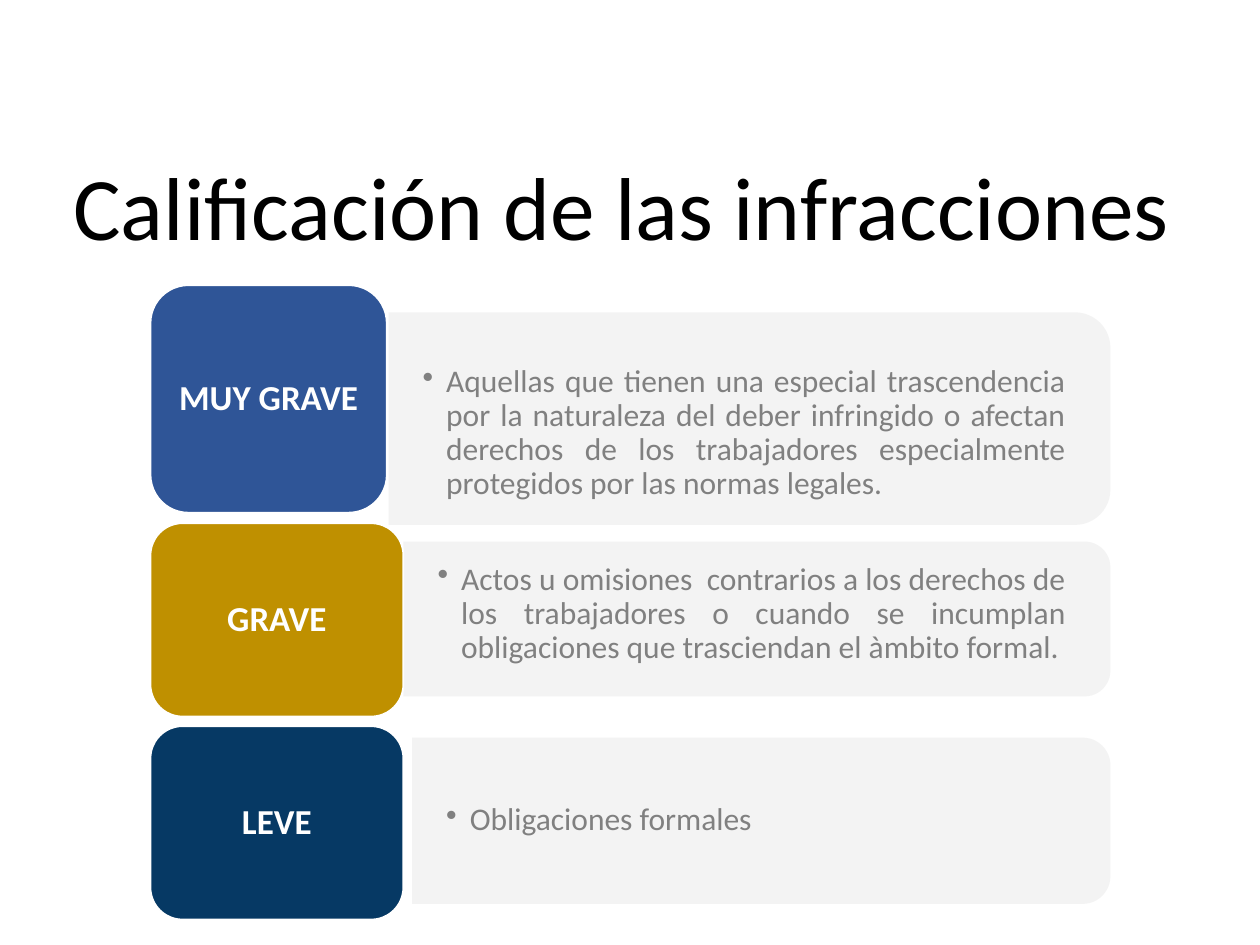
"""Build a slide that grades labour infractions in three rows."""
from typing import NamedTuple

from lxml.etree import SubElement
from pptx import Presentation
from pptx.dml.color import RGBColor
from pptx.enum.shapes import MSO_SHAPE
from pptx.enum.text import MSO_ANCHOR, PP_ALIGN
from pptx.oxml.ns import qn
from pptx.util import Pt

COLORS = {
    "black": "000000",
    "white": "FFFFFF",
    "panel": "F2F2F2",
    "gray": "808080",
    "blue": "2F5597",
    "gold": "BF9000",
    "navy": "063964",
}
FONT = "Calibri"
LEFT = 86
RIGHT = 634.5


class Box(NamedTuple):
    left: float
    top: float
    width: float
    height: float


class Grade(NamedTuple):
    name: str
    color: str
    tile: Box
    panel: Box
    text: str
    pads: tuple[float, float]


def panel(left: float, top: float, height: float) -> Box:
    return Box(left, top, RIGHT - left, height)


GRADES = [
    Grade("MUY GRAVE", "blue", Box(LEFT, 163, 135, 130), panel(222, 178.5, 121.5),
          "Aquellas que tienen una especial trascendencia por la naturaleza del deber "
          "infringido o afectan derechos de los trabajadores especialmente protegidos "
          "por las normas legales.", (17, 0)),
    Grade("GRAVE", "gold", Box(LEFT, 299, 144.5, 110.5), panel(230.5, 309.5, 88.5),
          "Actos u omisiones  contrarios a los derechos de los trabajadores o cuando se "
          "incumplan obligaciones que trasciendan el àmbito formal.", (4, 10)),
    Grade("LEVE", "navy", Box(LEFT, 415, 144.5, 110.5), panel(235.5, 421.5, 95),
          "Obligaciones formales", (10, 10)),
]


def rgb(name: str) -> RGBColor:
    return RGBColor.from_string(COLORS[name])


def put(item, values: dict) -> None:
    for key, value in values.items():
        setattr(item, key, value)


def place(box: Box) -> list:
    return [Pt(n) for n in box]


def write(frame, text: str, color: str, font: dict, para: dict, pads: dict):
    put(frame, {"word_wrap": True, "vertical_anchor": MSO_ANCHOR.MIDDLE}
        | {f"margin_{side}": Pt(n) for side, n in pads.items()})
    line = frame.paragraphs[0]
    put(line, para)
    run = line.add_run()
    run.text = text
    put(run.font, {"name": FONT} | font)
    run.font.color.rgb = rgb(color)
    return line


def draw_title(slide) -> None:
    title = slide.shapes.title
    put(title, dict(zip(("left", "top", "width", "height"),
                        place(Box(31, 61, 648, 90)))))
    write(title.text_frame, "Calificación de las infracciones", "black",
          {"size": Pt(51)}, {"alignment": PP_ALIGN.CENTER, "line_spacing": 0.8}, {})
    title.text_frame.vertical_anchor = MSO_ANCHOR.BOTTOM


def draw_panel(slide, grade: Grade) -> None:
    box = grade.panel
    shift = (box.width - box.height) / 2
    turned = Box(box.left + shift, box.top - shift, box.height, box.width)
    shape = slide.shapes.add_shape(MSO_SHAPE.ROUND_2_SAME_RECTANGLE, *place(turned))
    shape.rotation = 90
    shape.shadow.inherit = False
    shape.fill.solid()
    shape.fill.fore_color.rgb = rgb("panel")
    tint = shape.fill._xPr.find(qn("a:solidFill"))[0]
    SubElement(tint, qn("a:alpha"), val="90000")
    shape.line.fill.background()

    inner = Box(box.left, box.top + 6, box.width - 6, box.height - 12)
    note = slide.shapes.add_textbox(*place(inner))
    top, bottom = grade.pads
    line = write(note.text_frame, grade.text, "gray", {"size": Pt(18)},
                 {"alignment": PP_ALIGN.JUSTIFY, "line_spacing": 0.9, "level": 1},
                 {"left": 19.5, "right": 19.5, "top": top, "bottom": bottom})
    props = line._p.get_or_add_pPr()
    props.set("marL", str(Pt(13.5)))
    props.set("indent", str(-Pt(13.5)))
    SubElement(props, qn("a:buChar"), char="•")


def draw_tile(slide, grade: Grade) -> None:
    tile = slide.shapes.add_shape(MSO_SHAPE.ROUNDED_RECTANGLE, *place(grade.tile))
    tile.shadow.inherit = False
    tile.fill.solid()
    tile.fill.fore_color.rgb = rgb(grade.color)
    tile.line.color.rgb = rgb("white")
    tile.line.width = Pt(1)
    write(tile.text_frame, grade.name, "white", {"size": Pt(20), "bold": True},
          {"alignment": PP_ALIGN.CENTER, "line_spacing": 0.9},
          {"left": 6, "right": 6, "top": 3, "bottom": 3})


def main() -> None:
    deck = Presentation()
    put(deck, {"slide_width": Pt(720), "slide_height": Pt(540)})
    slide = deck.slides.add_slide(deck.slide_layouts[5])
    draw_title(slide)
    for grade in GRADES:
        draw_panel(slide, grade)
        draw_tile(slide, grade)
    deck.save("out.pptx")


if __name__ == "__main__":
    main()
